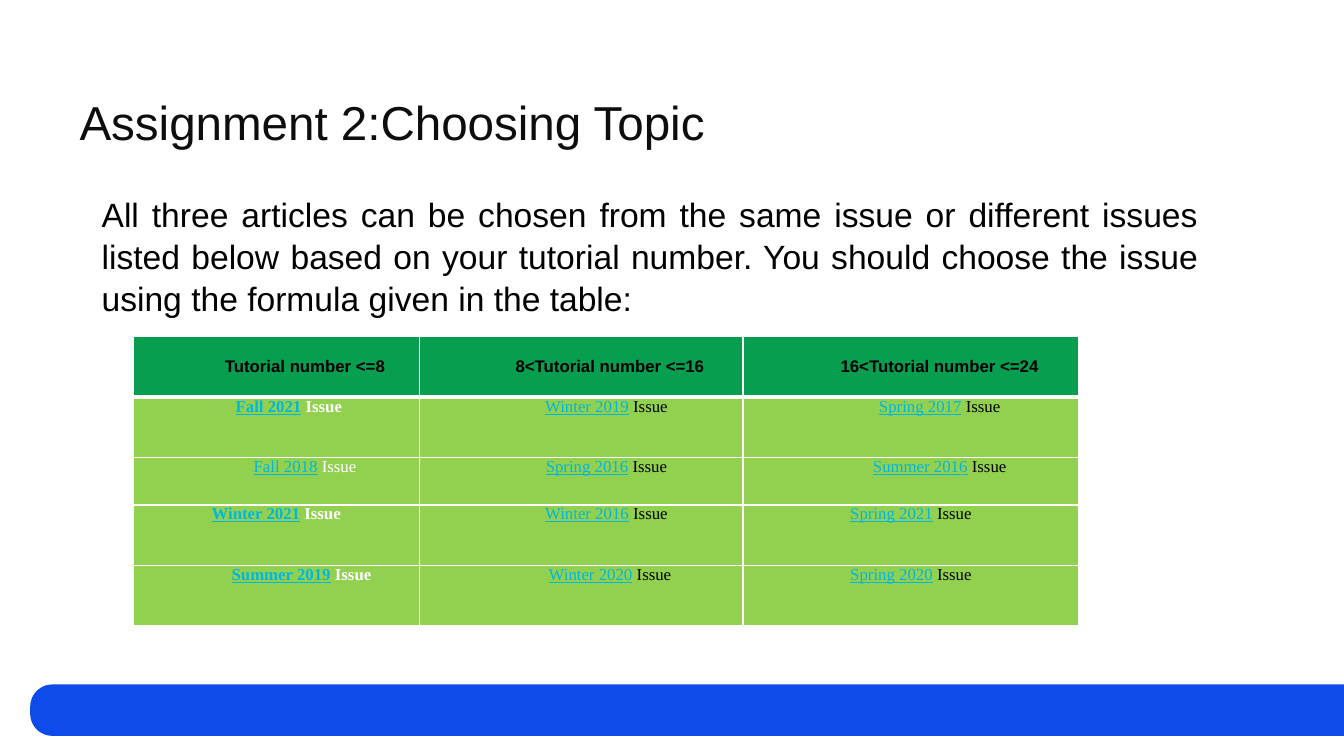
"""Build the slide on choosing a topic for assignment 2."""
import pptx
import pptx.util
import pptx.dml.color
import pptx.enum.shapes
import pptx.enum.text
import pptx.oxml

Inches = pptx.util.Inches
Pt = pptx.util.Pt
ALIGN = pptx.enum.text.PP_ALIGN
ANCHOR = pptx.enum.text.MSO_ANCHOR
HUES = {"bar": "0F4BEB", "title": "0D0D0D", "black": "000000", "white": "FFFFFF",
        "head": "079E4F", "body": "92D050", "link": "00B7E0"}
NS = "http://schemas.openxmlformats.org/drawingml/2006/main"


def hue(name):
    return pptx.dml.color.RGBColor.from_string(HUES[name])


def style(run, face, size, color, bold=False, under=False):
    font = run.font
    font.name, font.size, font.bold, font.underline = face, Pt(size), bold, under
    font.color.rgb = hue(color)


deck = pptx.Presentation()
deck.slide_width, deck.slide_height = Inches(13.33), Inches(7.5)
slide = deck.slides.add_slide(deck.slide_layouts[6])
shapes = slide.shapes

bar = shapes.add_shape(pptx.enum.shapes.MSO_SHAPE.ROUND_2_SAME_RECTANGLE,
                       Inches(6.56), Inches(0.53), Inches(0.51), Inches(13.03))
bar.rotation = 270
bar.adjustments[0] = 0.43
bar.adjustments[1] = 0
bar.shadow.inherit = False
bar.fill.solid()
bar.fill.fore_color.rgb = hue("bar")
bar.line.fill.background()

texts = [
    ((0.69, 0.94, 11.29, 1.09), "Assignment 2:Choosing Topic", 34, "title", ALIGN.LEFT, 0.9),
    ((0.91, 1.85, 11.07, 1.31),
     "All three articles can be chosen from the same issue or different issues listed below "
     "based on your tutorial number. You should choose the issue using the formula given "
     "in the table:", 24, "black", ALIGN.JUSTIFY, 1.05),
]
for place, words, size, color, align, space in texts:
    frame = shapes.add_textbox(*map(Inches, place)).text_frame
    frame.word_wrap = True
    frame.text = words
    para = frame.paragraphs[0]
    para.alignment, para.line_spacing = align, space
    style(para.runs[0], "Arial", size, color)

flat, first, hang, shift = (0, 0), (0, 0.5), (0.82, -0.25), (0.25, 0)
rows = [
    [("Tutorial number <=8", hang), ("8<Tutorial number <=16", hang),
     ("16<Tutorial number <=24", hang)],
    [("Fall 2021", shift), ("Winter 2019", first), ("Spring 2017", hang)],
    [("Fall 2018", hang), ("Spring 2016", first), ("Summer 2016", hang)],
    [("Winter 2021", flat), ("Winter 2016", first), ("Spring 2021", flat)],
    [("Summer 2019", first), ("Winter 2020", hang), ("Spring 2020", flat)],
]
widths = [2.84, 3.21, 3.33]
heights = [0.6, 0.6, 0.47, 0.6, 0.6]
table = shapes.add_table(len(rows), len(widths), Inches(1.32), Inches(3.34),
                         Inches(9.37), Inches(2.86)).table
table.first_row = table.horz_banding = False
for col, width in zip(table.columns, widths):
    col.width = Inches(width)
for row, height in zip(table.rows, heights):
    row.height = Inches(height)

for r, row in enumerate(rows):
    for c, (words, (left, indent)) in enumerate(row):
        cell = table.cell(r, c)
        cell.margin_left = cell.margin_right = Inches(0.07)
        cell.margin_top = cell.margin_bottom = 0
        cell.vertical_anchor = ANCHOR.TOP if r else ANCHOR.MIDDLE
        props = cell._tc.get_or_add_tcPr()
        for side in "LRTB":
            thick = (r, side) in [(0, "B"), (1, "T")]
            props.append(pptx.oxml.parse_xml(
                f'<a:ln{side} xmlns:a="{NS}" w="{Pt(3 if thick else 1)}"><a:solidFill>'
                f'<a:srgbClr val="{HUES["white"]}"/></a:solidFill></a:ln{side}>'))
        cell.fill.solid()
        cell.fill.fore_color.rgb = hue("body" if r else "head")

        para = cell.text_frame.paragraphs[0]
        para.text = words
        para.alignment = ALIGN.CENTER
        marks = para._p.get_or_add_pPr()
        marks.set("marL", str(Inches(left)))
        marks.set("indent", str(Inches(indent)))
        if r == 0:
            style(para.runs[0], "Arial", 12, "black", bold=True)
            continue
        bold = c == 0 and r != 2
        style(para.runs[0], "Times New Roman", 12, "link", bold, True)
        issue = para.add_run()
        issue.text = " Issue"
        style(issue, "Times New Roman", 12, "black" if c else "white", bold)

deck.save("out.pptx")
